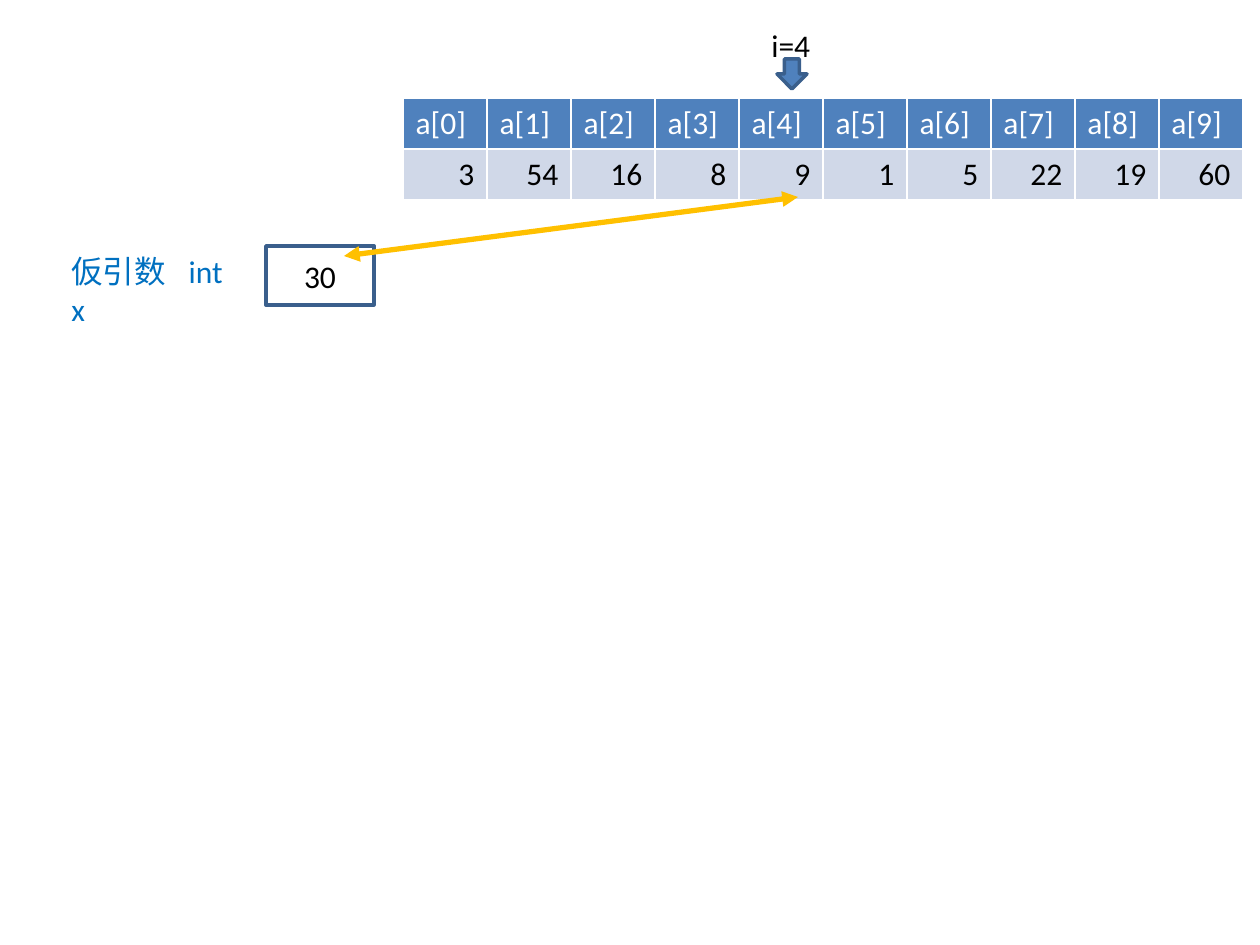
import pptx
import pptx.util
import pptx.dml.color
import pptx.enum.shapes
import pptx.enum.text
import pptx.oxml
import pptx.oxml.ns

DATA = [3, 54, 16, 8, 9, 1, 5, 22, 19, 60]
HEX = {"blue": "4F81BD", "edge": "3A5F8C", "pale": "D0D8E8", "text": "0070C0",
       "gold": "FFC000", "white": "FFFFFF", "black": "000000"}
GRID = (403, 98, 84, 51)
BOX = (266, 246, 108, 59)
LABEL = (59, 246, 190, 50)
ARROW = (777, 59, 30, 30)
INDEX = (759, 20, 64, 50)
LINK = (798, 197, 344, 256)
GAP = 900

Pt = pptx.util.Pt
Kind = pptx.enum.shapes.MSO_SHAPE
Align = pptx.enum.text.PP_ALIGN
Fit = pptx.enum.text.MSO_AUTO_SIZE
Anchor = pptx.enum.text.MSO_ANCHOR


def emu(*vals):
    return [round(v * 914400 / 126) for v in vals]


def tint(name):
    return pptx.dml.color.RGBColor.from_string(HEX[name])


def paint(fill, name):
    fill.solid()
    fill.fore_color.rgb = tint(name)


def stroke(line, name, width):
    paint(line.fill, name)
    line.width = Pt(width)


def write(frame, text, color, align=Align.LEFT):
    para = frame.paragraphs[0]
    para.alignment = align
    run = para.add_run()
    run.text = text
    run.font.size = Pt(18)
    run.font.name = "Calibri"
    run.font.bold = False
    run.font.color.rgb = tint(color)
    return run


def block(slide, kind, area, fill, edge=None):
    shape = slide.shapes.add_shape(kind, *emu(*area))
    shape.shadow.inherit = False
    paint(shape.fill, fill)
    if edge:
        stroke(shape.line, edge, 2)
    else:
        shape.line.fill.background()
    return shape


def border(cell):
    props = cell._tc.get_or_add_tcPr()
    for spot, side in enumerate(("lnL", "lnR", "lnT", "lnB")):
        props.insert(spot, pptx.oxml.parse_xml(
            f'<a:{side} {pptx.oxml.ns.nsdecls("a")} w="12700"><a:solidFill>'
            f'<a:srgbClr val="{HEX["white"]}"/></a:solidFill></a:{side}>'))


def grid(slide):
    left, top, wide, high = GRID
    count = len(DATA)
    table = slide.shapes.add_table(
        2, count, *emu(left, top, wide * count, high * 2)).table
    for col, value in enumerate(DATA):
        table.columns[col].width = emu(wide)[0]
        rows = [(f"a[{col}]", "blue", "white", Align.LEFT),
                (str(value), "pale", "black", Align.RIGHT)]
        for row, (text, fill, color, align) in enumerate(rows):
            cell = table.cell(row, col)
            paint(cell.fill, fill)
            border(cell)
            write(cell.text_frame, text, color, align)


def link(slide):
    line = slide.shapes.add_connector(
        pptx.enum.shapes.MSO_CONNECTOR.STRAIGHT, *emu(*LINK))
    stroke(line.line, "gold", 3)
    for end in ("headEnd", "tailEnd"):
        line.line._get_or_add_ln().append(pptx.oxml.parse_xml(
            f'<a:{end} {pptx.oxml.ns.nsdecls("a")} type="triangle"/>'))
    line._element.spPr.append(pptx.oxml.parse_xml(
        f'<a:effectLst {pptx.oxml.ns.nsdecls("a")}/>'))


def main():
    deck = pptx.Presentation()
    deck.slide_width, deck.slide_height = emu(1260, 945)
    slide = deck.slides.add_slide(deck.slide_layouts[6])
    grid(slide)

    box = block(slide, Kind.RECTANGLE, BOX, "white", "edge")
    box.text_frame.vertical_anchor = Anchor.MIDDLE
    write(box.text_frame, "30", "black", Align.CENTER)

    label = block(slide, Kind.RECTANGLE, LABEL, "white").text_frame
    label.word_wrap = True
    label.vertical_anchor = Anchor.TOP
    write(label, "仮引数", "text")
    space = write(label, " ", "text")
    space.font._element.set("spc", str(GAP))
    write(label, "int x", "text")

    block(slide, Kind.DOWN_ARROW, ARROW, "blue", "edge")
    link(slide)

    index = slide.shapes.add_textbox(*emu(*INDEX)).text_frame
    index.word_wrap = False
    index.auto_size = Fit.SHAPE_TO_FIT_TEXT
    write(index, "i=4", "black")
    deck.save("out.pptx")


if __name__ == "__main__":
    main()
